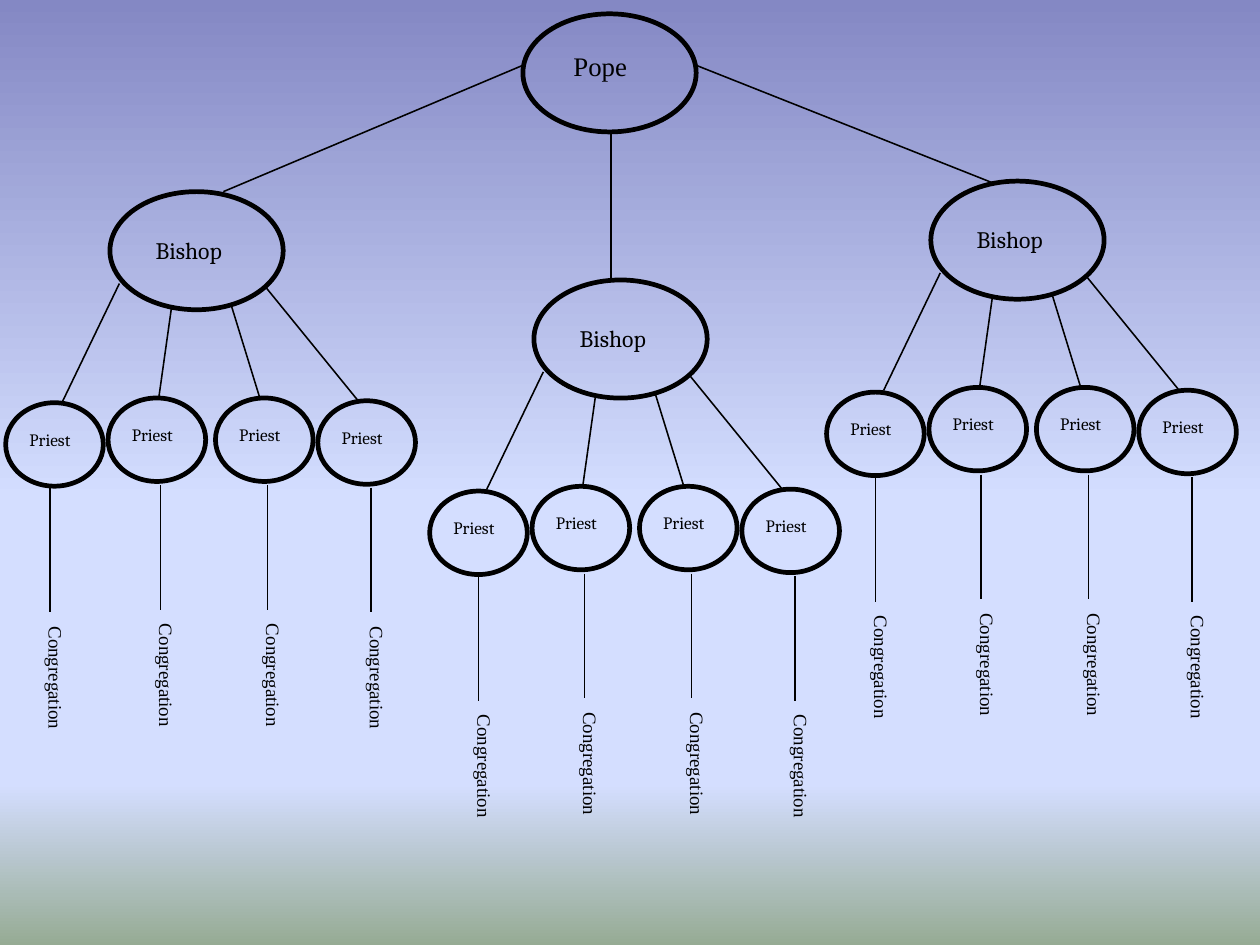
from copy import deepcopy
from dataclasses import dataclass

from pptx import Presentation
from pptx.dml.color import RGBColor
from pptx.enum.shapes import MSO_CONNECTOR, MSO_SHAPE
from pptx.enum.text import MSO_AUTO_SIZE
from pptx.oxml.ns import qn
from pptx.oxml.xmlchemy import OxmlElement
from pptx.slide import Slide
from pptx.util import Pt


@dataclass(frozen=True)
class Theme:
    ink: RGBColor = RGBColor(0, 0, 0)
    sky: tuple = ((0, "8488C4"), (0.53, "D4DEFF"), (0.83, "D4DEFF"), (1, "96AB94"))
    serif: str = "Times New Roman"
    label: str = "Cambria"
    pope: int = 17
    bishop: int = 15
    congregation: int = 12
    priest: int = 11
    outline: int = 3
    link: int = 1


@dataclass(frozen=True)
class Branch:
    x: float
    y: float
    first_stem_shift: float = 0


@dataclass(frozen=True)
class Parish:
    priest: tuple[float, float]
    spoke_start: tuple[float, float]
    spoke_end: tuple[float, float]
    stem: tuple[float, float]


THEME = Theme()
LARGE = (110, 75)
SMALL = (62, 53)
STEM_LENGTH = 79

BRANCHES = (
    Branch(69.8, 121.7, first_stem_shift=-2.9),
    Branch(339, 177.8),
    Branch(591, 115),
)
PARISHES = (
    Parish((-66.2, 134), (6, 58.3), (-30, 133), (-35.2, 188)),
    Parish((-1.2, 131), (39, 74.2), (31, 131), (32, 186.4)),
    Parish((67, 131), (77, 72), (95, 130.4), (100, 186.4)),
    Parish((132, 132.8), (98.8, 60.5), (157.8, 133), (165.8, 188)),
)
POPE_LINKS = (
    ((331.2, 41.8), (141.8, 121.7)),
    ((388, 83), (388, 177)),
    ((442.8, 41.8), (630, 116)),
)


def paint_background(s: Slide) -> None:
    fill = s.background.fill
    fill.gradient()
    fill.gradient_angle = 270
    stops = next(s.element.iter(qn("a:gsLst")))
    while len(stops) < len(THEME.sky):
        stops.append(deepcopy(stops[0]))
    for stop, (position, color) in zip(fill.gradient_stops, THEME.sky):
        stop.position = position
        stop.color.rgb = RGBColor.from_string(color)


def add_ellipse(s: Slide, x: float, y: float, size: tuple[float, float]) -> None:
    sp = s.shapes.add_shape(MSO_SHAPE.OVAL, Pt(x), Pt(y), Pt(size[0]), Pt(size[1]))
    sp.shadow.inherit = False
    sp.fill.background()
    sp.line.color.rgb = THEME.ink
    sp.line.width = Pt(THEME.outline)


def add_link(s: Slide, start: tuple[float, float], end: tuple[float, float]) -> None:
    cxn = s.shapes.add_connector(
        MSO_CONNECTOR.STRAIGHT, Pt(start[0]), Pt(start[1]), Pt(end[0]), Pt(end[1])
    )
    cxn.line.color.rgb = THEME.ink
    cxn.line.width = Pt(THEME.link)
    cxn.element.spPr.append(OxmlElement("a:effectLst"))


def add_text(s: Slide, text: str, *, x: float, y: float, w: float, h: float,
             size: int, font: str, vertical: bool = False) -> None:
    sp = s.shapes.add_textbox(Pt(x), Pt(y), Pt(w), Pt(h))
    tf = sp.text_frame
    tf.word_wrap = True
    tf.auto_size = MSO_AUTO_SIZE.SHAPE_TO_FIT_TEXT
    if vertical:
        sp.element.txBody.bodyPr.set("vert", "eaVert")
    r = tf.paragraphs[0].add_run()
    r.text = text
    r.font.size = Pt(size)
    r.font.name = font
    r.font.color.rgb = THEME.ink


def add_parish(s: Slide, branch: Branch, parish: Parish, stem_shift: float) -> None:
    def place(point: tuple[float, float]) -> tuple[float, float]:
        return branch.x + point[0], branch.y + point[1]

    x, y = place(parish.priest)
    add_ellipse(s, x, y, SMALL)
    add_text(s, "Priest", x=x + 8, y=y + 13, w=60, h=21,
             size=THEME.priest, font=THEME.label)
    add_link(s, place(parish.spoke_start), place(parish.spoke_end))

    x, y = place(parish.stem)
    x += stem_shift
    add_link(s, (x, y), (x, y + STEM_LENGTH))
    add_text(s, "Congregation", x=x - 14, y=y + STEM_LENGTH + 2, w=28.8, h=103.7,
             size=THEME.congregation, font=THEME.serif, vertical=True)


def add_branch(s: Slide, branch: Branch) -> None:
    add_ellipse(s, branch.x, branch.y, LARGE)
    add_text(s, "Bishop", x=branch.x + 22, y=branch.y + 24.3, w=86, h=25,
             size=THEME.bishop, font=THEME.label)
    for i, parish in enumerate(PARISHES):
        add_parish(s, branch, parish, 0 if i else branch.first_stem_shift)


def main() -> None:
    prs = Presentation()
    prs.slide_width, prs.slide_height = Pt(800), Pt(600)
    s = prs.slides.add_slide(prs.slide_layouts[6])
    paint_background(s)
    add_ellipse(s, 332, 8.8, LARGE)
    add_text(s, "Pope", x=357, y=28, w=80, h=28, size=THEME.pope, font=THEME.serif)
    for branch in BRANCHES:
        add_branch(s, branch)
    for start, end in POPE_LINKS:
        add_link(s, start, end)
    prs.save("out.pptx")


if __name__ == "__main__":
    main()
